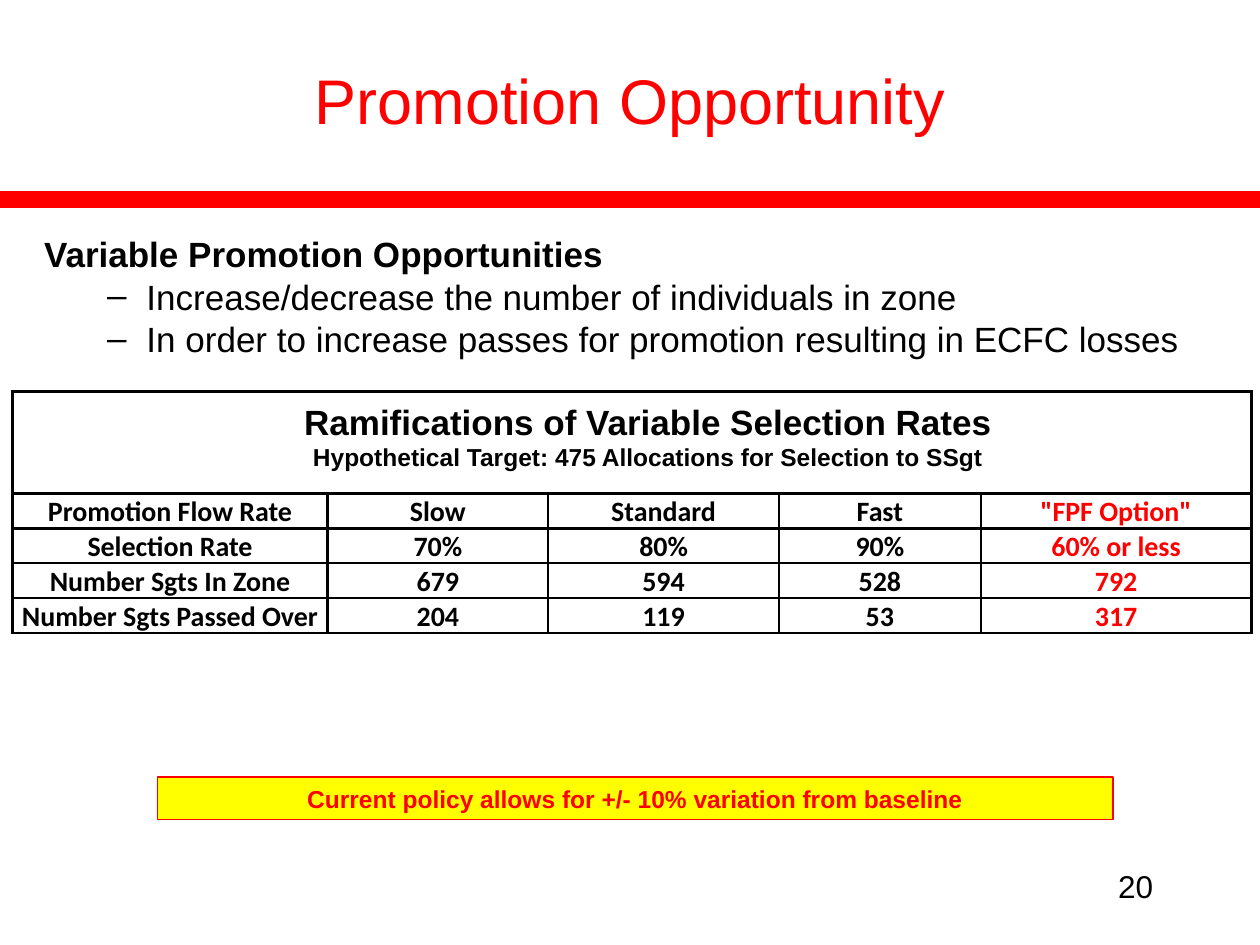
from lxml import etree
from pptx import Presentation
from pptx import util as u
from pptx.dml.color import RGBColor
from pptx.enum import shapes, text
from pptx.oxml.ns import qn

RED, BLACK, YELLOW = "FF0000", "000000", "FFFF00"
CENTER, RIGHT = text.PP_ALIGN.CENTER, text.PP_ALIGN.RIGHT
MIDDLE, BOTTOM = text.MSO_ANCHOR.MIDDLE, text.MSO_ANCHOR.BOTTOM


def color(value):
    return RGBColor.from_string(value)


def write(paragraph, words, size=20, font="Arial", ink=BLACK, bold=False,
          align=None, spacing=None, before=0):
    paragraph.text = words
    paragraph.alignment = align
    paragraph.line_spacing = spacing
    paragraph.space_before = u.Pt(before)
    paragraph.font.size = u.Pt(size)
    paragraph.font.name = font
    paragraph.font.bold = bold
    paragraph.font.color.rgb = color(ink)


def set_bullet(paragraph, left, hanging, character=None):
    properties = paragraph._p.get_or_add_pPr()
    properties.set("marL", str(u.Pt(left)))
    properties.set("indent", str(-u.Pt(hanging)))
    if character:
        etree.SubElement(properties, qn("a:buChar")).set("char", character)
    else:
        etree.SubElement(properties, qn("a:buNone"))


def set_borders(cell, width):
    properties = cell._tc.get_or_add_tcPr()
    for index, side in enumerate(("lnL", "lnR", "lnT", "lnB")):
        line = etree.Element(qn(f"a:{side}"), w=str(u.Pt(width)))
        fill = etree.SubElement(line, qn("a:solidFill"))
        etree.SubElement(fill, qn("a:srgbClr")).set("val", BLACK)
        properties.insert(index, line)


class SlideBuilder:
    def __init__(self, slide):
        self.slide = slide

    def place(self, shape, left, top, width, height):
        shape.left, shape.top = u.Pt(left), u.Pt(top)
        shape.width, shape.height = u.Pt(width), u.Pt(height)

    def title(self, words, box):
        shape = self.slide.shapes.title
        self.place(shape, *box)
        shape.text_frame.vertical_anchor = MIDDLE
        write(shape.text_frame.paragraphs[0], words, size=36, ink=RED, align=CENTER)

    def body(self, heading, points, box):
        shape = self.slide.placeholders[1]
        self.place(shape, *box)
        frame = shape.text_frame
        frame.auto_size = text.MSO_AUTO_SIZE.NONE
        first = frame.paragraphs[0]
        set_bullet(first, 27, 27)
        write(first, heading, bold=True, spacing=0.8)
        for point in points:
            paragraph = frame.add_paragraph()
            paragraph.level = 1
            set_bullet(paragraph, 58.5, 22.5, "–")
            write(paragraph, point, spacing=0.8, before=5)

    def rule(self, y, width, thickness):
        line = self.slide.shapes.add_connector(
            shapes.MSO_CONNECTOR.STRAIGHT, 0, u.Pt(y), u.Pt(width), u.Pt(y))
        line.line.color.rgb = color(RED)
        line.line.width = u.Pt(thickness)
        etree.SubElement(line._element.spPr, qn("a:effectLst"))

    def banner(self, words, box):
        shape = self.slide.shapes.add_shape(
            shapes.MSO_SHAPE.RECTANGLE, *map(u.Pt, box))
        shape.shadow.inherit = False
        shape.fill.solid()
        shape.fill.fore_color.rgb = color(YELLOW)
        shape.line.color.rgb = color(RED)
        shape.line.width = u.Pt(0.75)
        write(shape.text_frame.paragraphs[0], words, size=14, ink=RED,
              bold=True, align=CENTER)

    def label(self, words, box):
        frame = self.slide.shapes.add_textbox(*map(u.Pt, box)).text_frame
        frame.word_wrap = True
        write(frame.paragraphs[0], words, size=18, align=RIGHT)

    def table(self, heading, subheading, rows, left, top, widths, heights):
        """Draw a table whose first row is one merged heading cell."""
        table = self.slide.shapes.add_table(
            len(heights), len(widths), u.Pt(left), u.Pt(top),
            u.Pt(sum(widths)), u.Pt(sum(heights))).table
        table.first_row = table.horz_banding = False
        for column, width in zip(table.columns, widths):
            column.width = u.Pt(width)
        for row, height in zip(table.rows, heights):
            row.height = u.Pt(height)
        for cell in table.iter_cells():
            cell.margin_left = cell.margin_right = cell.margin_top = u.Pt(0.75)
            cell.margin_bottom = 0
            cell.vertical_anchor = MIDDLE
            cell.fill.background()
            set_borders(cell, 1.5)

        banner = table.cell(0, 0)
        banner.merge(table.cell(0, len(widths) - 1))
        banner.vertical_anchor = BOTTOM
        banner.margin_left, banner.margin_bottom = u.Pt(19), u.Pt(12.5)
        write(banner.text_frame.paragraphs[0], heading, bold=True, align=CENTER)
        write(banner.text_frame.add_paragraph(), subheading, size=14,
              bold=True, align=CENTER, before=1)

        last = len(widths) - 1
        for r, row in enumerate(rows, start=1):
            for c, words in enumerate(row):
                write(table.cell(r, c).text_frame.paragraphs[0], words, size=16,
                      font="Calibri", bold=True, align=CENTER,
                      ink=RED if c == last else BLACK)


def main():
    presentation = Presentation()
    presentation.slide_width, presentation.slide_height = u.Pt(720), u.Pt(540)
    builder = SlideBuilder(
        presentation.slides.add_slide(presentation.slide_layouts[1]))

    builder.rule(114, 720, 10)
    builder.title("Promotion Opportunity", (0, 12, 720, 90))
    builder.body(
        "Variable Promotion Opportunities",
        ["Increase/decrease the number of individuals in zone",
         "In order to increase passes for promotion resulting in ECFC losses"],
        (18, 134, 690, 352))
    builder.banner("Current policy allows for +/- 10% variation from baseline",
                   (90, 444, 546, 24.5))
    builder.label("20", (516, 492, 150, 36))

    rates = [
        ["Promotion Flow Rate", "Slow", "Standard", "Fast", '"FPF Option"'],
        ["Selection Rate", "70%", "80%", "90%", "60% or less"],
        ["Number Sgts In Zone", "679", "594", "528", "792"],
        ["Number Sgts Passed Over", "204", "119", "53", "317"],
    ]
    builder.table(
        "Ramifications of Variable Selection Rates",
        "Hypothetical Target: 475 Allocations for Selection to SSgt",
        rates, left=7.2, top=223.7, widths=[180, 126, 132, 115.2, 154.8],
        heights=[58.3] + [19.7] * len(rates))
    presentation.save("out.pptx")


if __name__ == "__main__":
    main()
